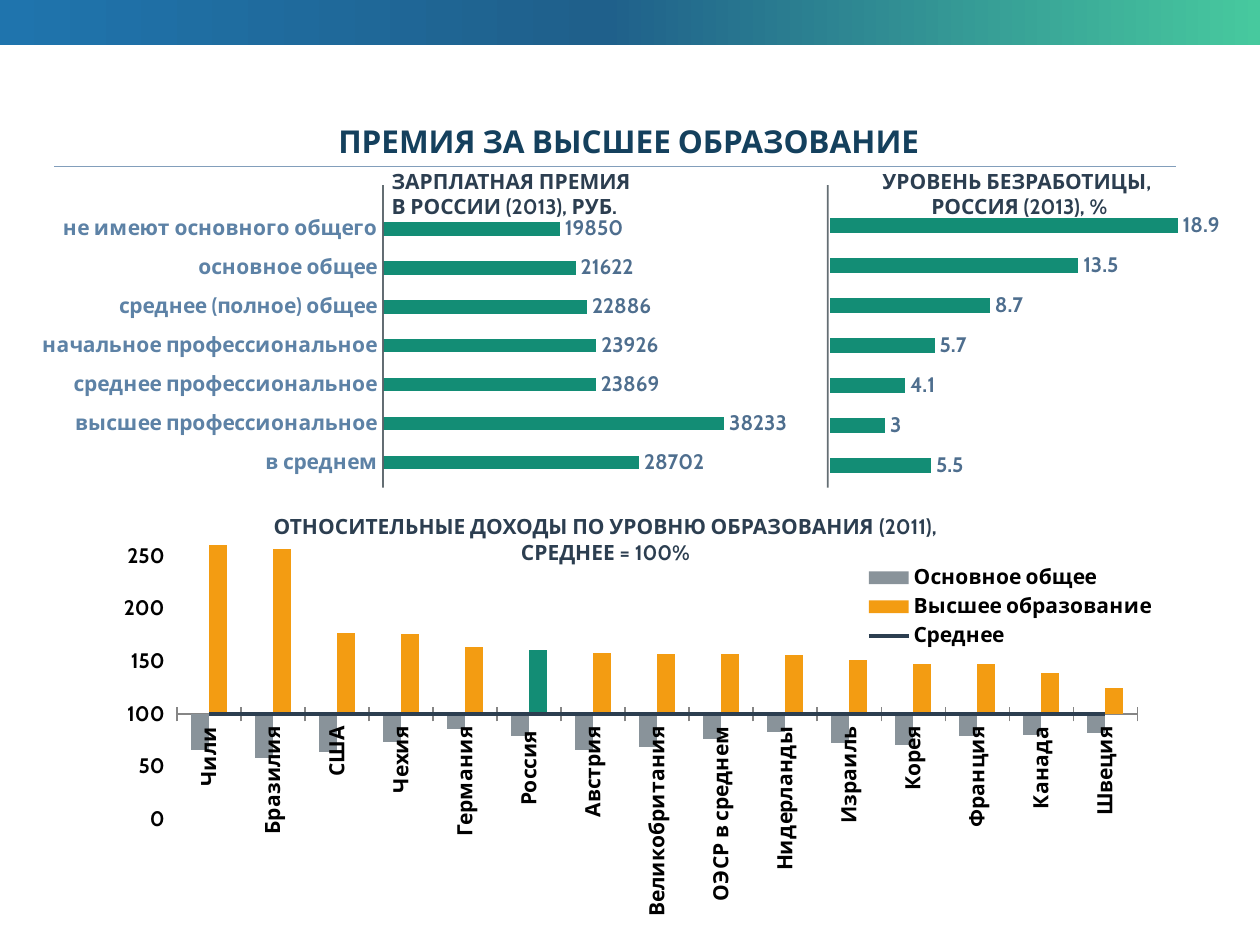
"""Build the slide on the premium for higher education."""
import copy

import lxml.etree
import pptx
import pptx.chart.data
import pptx.dml.color
import pptx.enum.chart
import pptx.enum.shapes
import pptx.enum.text
import pptx.oxml
import pptx.oxml.ns
import pptx.util

Inches, Pt, qn = pptx.util.Inches, pptx.util.Pt, pptx.oxml.ns.qn
XL = pptx.enum.chart
NS = pptx.oxml.ns.nsdecls("c")


def rgb(value):
    """Return the colour for a hex string."""
    return pptx.dml.color.RGBColor.from_string(value)


def place(parent, index, box, target=""):
    """Give a chart part a manual layout in fractions of the chart."""
    old = parent.find(qn("c:layout"))
    if old is not None:
        parent.remove(old)
    modes = "".join(f'<c:{k}Mode val="edge"/>' for k in "xy")
    sizes = "".join(f'<c:{k} val="{v}"/>' for k, v in zip("xywh", box))
    parent.insert(index, pptx.oxml.parse_xml(
        f"<c:layout {NS}><c:manualLayout>{target}{modes}{sizes}</c:manualLayout></c:layout>"))


INNER = '<c:layoutTarget val="inner"/>'
prs = pptx.Presentation()
prs.slide_width, prs.slide_height = Inches(10), Inches(7.5)
s = prs.slides.add_slide(prs.slide_layouts[6])

band = s.shapes.add_shape(pptx.enum.shapes.MSO_SHAPE.RECTANGLE,
                          Inches(-0.01), Inches(-0.03), Inches(10.01), Inches(0.39))
band.shadow.inherit = False
band.line.fill.background()
band.fill.gradient()
band.fill.gradient_angle = 0
stops = band._element.spPr.find(qn("a:gradFill")).find(qn("a:gsLst"))
stops.insert(1, copy.deepcopy(stops[0]))
for stop, pos, color in zip(band.fill.gradient_stops, (0, 0.48, 1), ("1F74AD", "1F608B", "47C99E")):
    stop.position = pos
    stop.color.rgb = rgb(color)

levels = ["в среднем", "высшее профессиональное", "среднее профессиональное",
          "начальное профессиональное", "среднее (полное) общее", "основное общее",
          "не имеют основного общего"]
bars = [
    {"at": (0, 1.04, 6.42, 2.79), "cats": levels, "max": 40000, "fmt": "0",
     "vals": (28702, 38233, 23869, 23926, 22886, 21622, 19850),
     "plot": (0.473, 0.223, 0.442, 0.777), "visible": True},
    {"at": (6.42, 1.14, 3.39, 2.86), "cats": list("1234567"), "max": 20, "fmt": "General",
     "vals": (5.5, 3, 4.1, 5.7, 8.7, 13.5, 18.9),
     "plot": (0.049, 0.172, 0.862, 0.777), "visible": False},
]
bold = {"name": "Cabin", "size": Pt(12), "bold": True}
for bar in bars:
    data = pptx.chart.data.CategoryChartData()
    data.categories = bar["cats"]
    data.add_series("Series 1", bar["vals"])
    chart = s.shapes.add_chart(XL.XL_CHART_TYPE.BAR_CLUSTERED, *map(Inches, bar["at"]), data).chart
    chart.has_title = chart.has_legend = False
    chart.font.name, chart.font.size = "Calibri", Pt(10)
    chart.font.color.rgb = rgb("2C3E50")
    place(chart._chartSpace.chart.plotArea, 0, bar["plot"], INNER)
    axis = chart.value_axis
    for key, value in {"minimum_scale": 0, "maximum_scale": bar["max"],
                       "has_major_gridlines": False, "visible": False}.items():
        setattr(axis, key, value)
    axis = chart.category_axis
    axis.visible = bar["visible"]
    axis.major_tick_mark = XL.XL_TICK_MARK.NONE
    axis.format.line.color.rgb = rgb("DAE2EA")
    axis.format.line.width = Pt(0.75)
    plot = chart.plots[0]
    plot.gap_width, plot.vary_by_categories = 182, False
    series = plot.series[0]
    series.invert_if_negative = False
    series.format.fill.solid()
    series.format.fill.fore_color.rgb = rgb("138D75")
    labels = series.data_labels
    for key, value in {"show_value": True, "number_format": bar["fmt"],
                       "number_format_is_linked": False,
                       "position": XL.XL_LABEL_POSITION.OUTSIDE_END}.items():
        setattr(labels, key, value)
    for font, color in ((axis.tick_labels.font, "5D82A6"), (labels.font, "4E6E8E")):
        for key, value in bold.items():
            setattr(font, key, value)
        font.color.rgb = rgb(color)

lines = [(0.43, 1.32, 9.33, 1.32, "829EBB", 0.75, 100),
         (3.04, 1.47, 3.04, 3.87, "596369", 1, 92),
         (6.57, 1.47, 6.57, 3.87, "596369", 1, 92)]
for *ends, color, width, opacity in lines:
    line = s.shapes.add_connector(pptx.enum.shapes.MSO_CONNECTOR.STRAIGHT, *map(Inches, ends))
    line.line.color.rgb = rgb(color)
    line.line.width = Pt(width)
    if opacity < 100:
        fill = line._element.spPr.find(".//" + qn("a:srgbClr"))
        lxml.etree.SubElement(fill, qn("a:alpha")).set("val", str(opacity * 1000))
    lxml.etree.SubElement(line._element.spPr, qn("a:effectLst"))

LEFT, CENTER = pptx.enum.text.PP_ALIGN.LEFT, pptx.enum.text.PP_ALIGN.CENTER
texts = [
    ((3.01, 1.29, 5, 0.5), LEFT, 12, "2C3E50", ["ЗАРПЛАТНАЯ ПРЕМИЯ", "В РОССИИ (2013), РУБ."]),
    ((5.59, 1.29, 5, 0.51), CENTER, 12, "2C3E50", ["УРОВЕНЬ БЕЗРАБОТИЦЫ, ", "РОССИЯ (2013), %"]),
    ((-0.16, 0.92, 10.36, 0.4), CENTER, 18, "14405D", ["ПРЕМИЯ ЗА ВЫСШЕЕ ОБРАЗОВАНИЕ "]),
    ((1.38, 4.03, 6.85, 0.51), CENTER, 12, "2C3E50",
     ["ОТНОСИТЕЛЬНЫЕ ДОХОДЫ ПО УРОВНЮ ОБРАЗОВАНИЯ (2011),", "СРЕДНЕЕ = 100%"]),
]
for at, align, size, color, rows in texts:
    tf = s.shapes.add_textbox(*map(Inches, at)).text_frame
    tf.word_wrap = True
    tf.auto_size = pptx.enum.text.MSO_AUTO_SIZE.SHAPE_TO_FIT_TEXT
    for i, row in enumerate(rows):
        p = tf.add_paragraph() if i else tf.paragraphs[0]
        p.alignment = align
        r = p.add_run()
        r.text = row
        for key, value in {**bold, "size": Pt(size)}.items():
            setattr(r.font, key, value)
        r.font.color.rgb = rgb(color)

data = pptx.chart.data.CategoryChartData()
data.categories = ["Чили", "Бразилия", "США", "Чехия", "Германия", "Россия ", "Австрия",
                   "Великобритания", "ОЭСР в среднем", "Нидерланды", "Израиль", "Корея",
                   "Франция", "Канада", "Швеция"]
data.add_series("Основное общее", (66, 58, 64, 73, 86, 79, 66, 69, 76, 83, 72, 71, 79, 80, 82))
data.add_series("Высшее образование",
                (260, 257, 177, 176, 164, 161, 158, 157, 157, 156, 151, 147, 147, 139, 125))
data.add_series("Среднее", [100] * 15)
chart = s.shapes.add_chart(XL.XL_CHART_TYPE.COLUMN_CLUSTERED, Inches(0.67), Inches(4.06),
                           Inches(8.75), Inches(3.29), data).chart
chart.has_title = False
for key, value in bold.items():
    setattr(chart.font, key, value)
chart.font.color.rgb = rgb("000000")
area = chart._chartSpace.chart.plotArea
place(area, 0, (0.084, 0.031, 0.871, 0.712), INNER)
chart.has_legend = True
chart.legend.position = XL.XL_LEGEND_POSITION.RIGHT
chart.legend.include_in_layout = False
place(chart.legend._element, 1, (0.7, 0.12, 0.28, 0.22))
axis = chart.value_axis
for key, value in {"minimum_scale": 0, "maximum_scale": 280, "major_unit": 50, "crosses_at": 100,
                   "has_major_gridlines": False,
                   "major_tick_mark": XL.XL_TICK_MARK.CROSS}.items():
    setattr(axis, key, value)
axis.format.line.fill.background()
axis = chart.category_axis
axis.major_tick_mark = XL.XL_TICK_MARK.CROSS
axis.format.line.color.rgb = rgb("868686")
for key, value in bold.items():
    setattr(axis.tick_labels.font, key, value)
axis._element.find(qn("c:txPr")).find(qn("a:bodyPr")).set("rot", "-5400000")

plot = chart.plots[0]
plot.gap_width, plot.overlap, plot.vary_by_categories = 150, 0, False
low, high, mean = plot.series
for series, color in ((low, "89939A"), (high, "F39C12"), (high.points[5], "138D75")):
    series.format.fill.solid()
    series.format.fill.fore_color.rgb = rgb(color)
low.invert_if_negative = high.invert_if_negative = False
mean.format.line.color.rgb = rgb("2C3E50")

columns, ser = plot._element, mean._element
for tag in ser.findall(qn("c:invertIfNegative")):
    ser.remove(tag)
ser.find(qn("c:spPr")).addnext(pptx.oxml.parse_xml(
    f'<c:marker {NS}><c:symbol val="none"/></c:marker>'))
lxml.etree.SubElement(ser, qn("c:smooth")).set("val", "0")
combo = pptx.oxml.parse_xml(
    f'<c:lineChart {NS}><c:grouping val="standard"/><c:varyColors val="0"/></c:lineChart>')
combo.append(ser)
lxml.etree.SubElement(combo, qn("c:marker")).set("val", "1")
for axis_id in columns.findall(qn("c:axId")):
    combo.append(copy.deepcopy(axis_id))
columns.addnext(combo)

prs.save("out.pptx")
